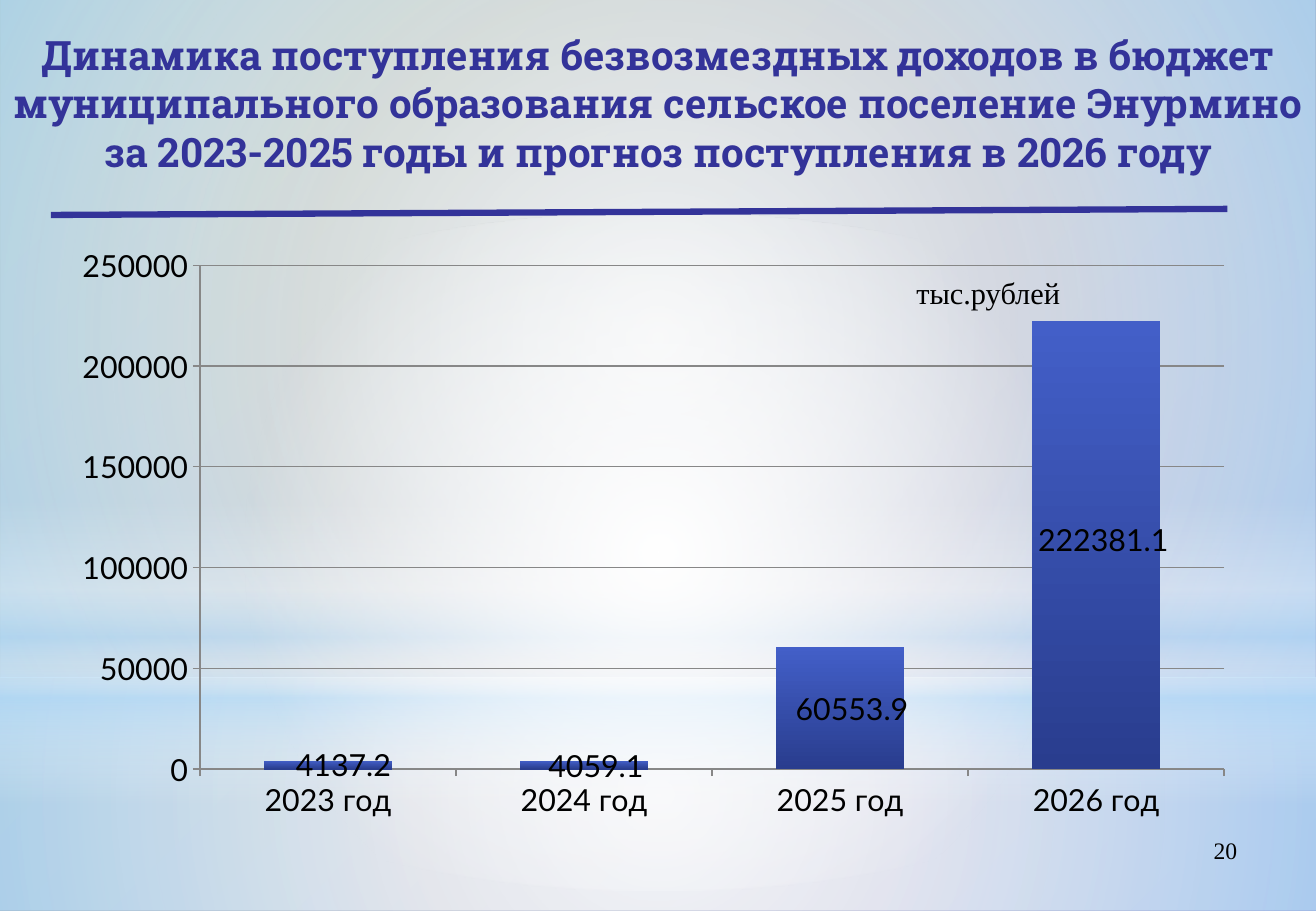
from lxml import etree
from pptx import Presentation
from pptx.chart.data import CategoryChartData
from pptx.dml.color import RGBColor
from pptx.enum.chart import XL_CHART_TYPE, XL_LABEL_POSITION, XL_TICK_MARK
from pptx.enum.shapes import MSO_CONNECTOR, MSO_SHAPE
from pptx.enum.text import MSO_ANCHOR, MSO_AUTO_SIZE, PP_ALIGN
from pptx.oxml import parse_xml
from pptx.oxml.ns import nsdecls, qn
from pptx.util import Inches, Pt

STACKED = XL_CHART_TYPE.COLUMN_STACKED
LABEL_CENTER = XL_LABEL_POSITION.CENTER
TICK_OUT = XL_TICK_MARK.OUTSIDE
TICK_NONE = XL_TICK_MARK.NONE
STRAIGHT = MSO_CONNECTOR.STRAIGHT
RECTANGLE, OVAL = MSO_SHAPE.RECTANGLE, MSO_SHAPE.OVAL
TOP, MIDDLE = MSO_ANCHOR.TOP, MSO_ANCHOR.MIDDLE
GROW = MSO_AUTO_SIZE.SHAPE_TO_FIT_TEXT
LEFT, CENTER, RIGHT = PP_ALIGN.LEFT, PP_ALIGN.CENTER, PP_ALIGN.RIGHT

WIDTH, HEIGHT = 10.84, 7.5
HORIZON = 5.58
COLORS = {
    "sage": "96AB94", "violet": "8488C4", "white": "FFFFFF", "sky": "B4DCFA",
    "navy": "333399", "black": "000000", "grid": "878787",
    "bar_top": "435FC8", "bar_bottom": "293D8E",
}
TITLE = ("Динамика поступления безвозмездных доходов в бюджет муниципального "
         "образования сельское поселение Энурмино за 2023-2025 годы и прогноз "
         "поступления в 2026 году")
INCOME = {"2023 год": 4137.2, "2024 год": 4059.1,
          "2025 год": 60553.9, "2026 год": 222381.1}
LABEL_SHIFTS = [(0.013, 0), (0.01, 0), (0.01, 0), (0.006, -0.01)]
PLOT_AREA = {"x": 0.12, "y": 0.05, "w": 0.86, "h": 0.85}

GLOWS = [
    (RECTANGLE, (0, HORIZON, WIDTH, HEIGHT - HORIZON),
     [(0, "white", 91), (37, "white", 76), (100, "sky", 79)], None),
    (RECTANGLE, (0, 0, WIDTH, HORIZON),
     [(0, "white", 89), (48, "white", 62), (100, "sky", 79)], None),
    (RECTANGLE, (0, 4.12, WIDTH, 2.5),
     [(0, "white", 0), (29, "white", 30), (45, "sky", 40),
      (55, "white", 26), (65, "sky", 60), (100, "white", 0)], 90),
    (OVAL, (0, 1.75, WIDTH, HORIZON),
     [(0, "white", 100), (56, "white", 0)], None),
]


def color(name):
    return RGBColor.from_string(COLORS[name])


def inches(box):
    return [Inches(length) for length in box]


def set_format(target, values):
    for name, value in values.items():
        setattr(target, name, value)


def set_font(font, values, color_name):
    set_format(font, values)
    font.color.rgb = color(color_name)


def paint_gradient(fill, element, stops, angle=None):
    fill.gradient()
    gradient = next(element.iter(qn("a:gradFill")))
    for child in list(gradient):
        gradient.remove(child)
    stop_list = etree.SubElement(gradient, qn("a:gsLst"))
    for position, name, opacity in stops:
        stop = etree.SubElement(stop_list, qn("a:gs"), pos=str(position * 1000))
        shade = etree.SubElement(stop, qn("a:srgbClr"), val=COLORS[name])
        if opacity < 100:
            etree.SubElement(shade, qn("a:alpha"), val=str(opacity * 1000))
    if angle is None:
        circle = etree.SubElement(gradient, qn("a:path"), path="circle")
        etree.SubElement(circle, qn("a:fillToRect"),
                         l="50000", t="50000", r="50000", b="50000")
    else:
        etree.SubElement(gradient, qn("a:lin"), ang=str(angle * 60000), scaled="0")


def add_backdrop(page, box):
    left, top, width, height = box
    paint_gradient(page.background.fill, page.element,
                   [(0, "sage", 100), (100, "violet", 100)], 45)
    for kind, (x, y, w, h), stops, angle in GLOWS:
        area = (left + x * width / WIDTH, top + y * height / HEIGHT,
                w * width / WIDTH, h * height / HEIGHT)
        glow = page.shapes.add_shape(kind, *inches(area))
        glow.shadow.inherit = False
        glow.line.fill.background()
        paint_gradient(glow.fill, glow.element, stops, angle)


def add_text(page, box, text, font, color_name, align=LEFT, **frame_values):
    frame = page.shapes.add_textbox(*inches(box)).text_frame
    set_format(frame, {"word_wrap": True, **frame_values})
    para = frame.paragraphs[0]
    para.alignment = align
    span = para.add_run()
    span.text = text
    set_font(span.font, font, color_name)


def add_heading(page, box):
    left, top, width, height = box
    add_text(page, (left, top, width, height - 0.25), TITLE,
             {"name": "Roboto Slab", "size": Pt(24), "bold": True},
             "navy", CENTER, vertical_anchor=MIDDLE)
    bottom = top + height
    rule = page.shapes.add_connector(
        STRAIGHT, *inches((left + 0.42, bottom, left + width - 0.73, bottom - 0.05)))
    rule.line.color.rgb = color("navy")
    rule.line.width = Pt(3.75)
    etree.SubElement(rule.element.spPr, qn("a:effectLst"))


def manual_layout(values, inner=False):
    target = '<c:layoutTarget val="inner"/>' if inner else ""
    modes = '<c:xMode val="edge"/><c:yMode val="edge"/>' if inner else ""
    places = "".join(f'<c:{name} val="{value}"/>' for name, value in values.items())
    return parse_xml(f'<c:layout {nsdecls("c")}><c:manualLayout>'
                     f'{target}{modes}{places}</c:manualLayout></c:layout>')


def style_axes(chart):
    for axis in (chart.category_axis, chart.value_axis):
        set_format(axis, {"major_tick_mark": TICK_OUT, "minor_tick_mark": TICK_NONE})
        axis.format.line.color.rgb = color("grid")
    values = chart.value_axis
    set_format(values, {"minimum_scale": 0, "maximum_scale": 250000,
                        "major_unit": 50000, "has_major_gridlines": True})
    values.major_gridlines.format.line.color.rgb = color("grid")
    set_format(values.tick_labels, {"number_format": "0",
                                    "number_format_is_linked": False})


def add_income_chart(page, box):
    left, top, width, height = box
    data = CategoryChartData(number_format="0.0")
    data.categories = list(INCOME)
    data.add_series("Series 1", list(INCOME.values()))
    chart = page.shapes.add_chart(STACKED, *inches(box), data).chart
    set_format(chart, {"has_legend": False, "has_title": False})
    font = {"name": "Lato", "size": Pt(18)}
    set_font(chart.font, font, "black")
    style_axes(chart)

    area = next(chart.element.iter(qn("c:plotArea")))
    for layout in area.findall(qn("c:layout")):
        area.remove(layout)
    area.insert(0, manual_layout(PLOT_AREA, inner=True))

    plot = chart.plots[0]
    set_format(plot, {"gap_width": 100, "overlap": 100, "vary_by_categories": False})
    series = plot.series[0]
    paint_gradient(series.format.fill, series.format.element
                   if hasattr(series.format, "element") else plot.series[0]._element,
                   [(0, "bar_top", 100), (100, "bar_bottom", 100)], 90)
    set_format(series.data_labels, {"show_value": True, "number_format": "0.0",
                                    "number_format_is_linked": False})
    for index, (x, y) in enumerate(LABEL_SHIFTS):
        label = series.points[index].data_label
        label.position = LABEL_CENTER
        set_font(label.font, font, "black")
    for mark, (x, y) in zip(area.iter(qn("c:dLbl")), LABEL_SHIFTS):
        mark.insert(1, manual_layout({"x": x, "y": y}))

    add_text(page, (left + 6.98, top + 0.27, 1.4, 0.4), "тыс.рублей",
             {"name": "Times New Roman", "size": Pt(18)}, "black",
             word_wrap=False, auto_size=GROW)


def add_page_number(page, box):
    add_text(page, box, "20", {"name": "Times New Roman", "size": Pt(14)},
             "black", RIGHT, vertical_anchor=TOP)


def main():
    deck = Presentation()
    set_format(deck, {"slide_width": Inches(WIDTH), "slide_height": Inches(HEIGHT)})
    page = deck.slides.add_slide(deck.slide_layouts[6])
    add_backdrop(page, (0, 0, WIDTH, HEIGHT))
    add_page_number(page, (7.76, 6.83, 2.53, 0.52))
    add_heading(page, (0, 0.17, WIDTH, 1.6))
    add_income_chart(page, (0.47, 1.94, 9.81, 4.88))
    deck.save("out.pptx")


if __name__ == "__main__":
    main()
